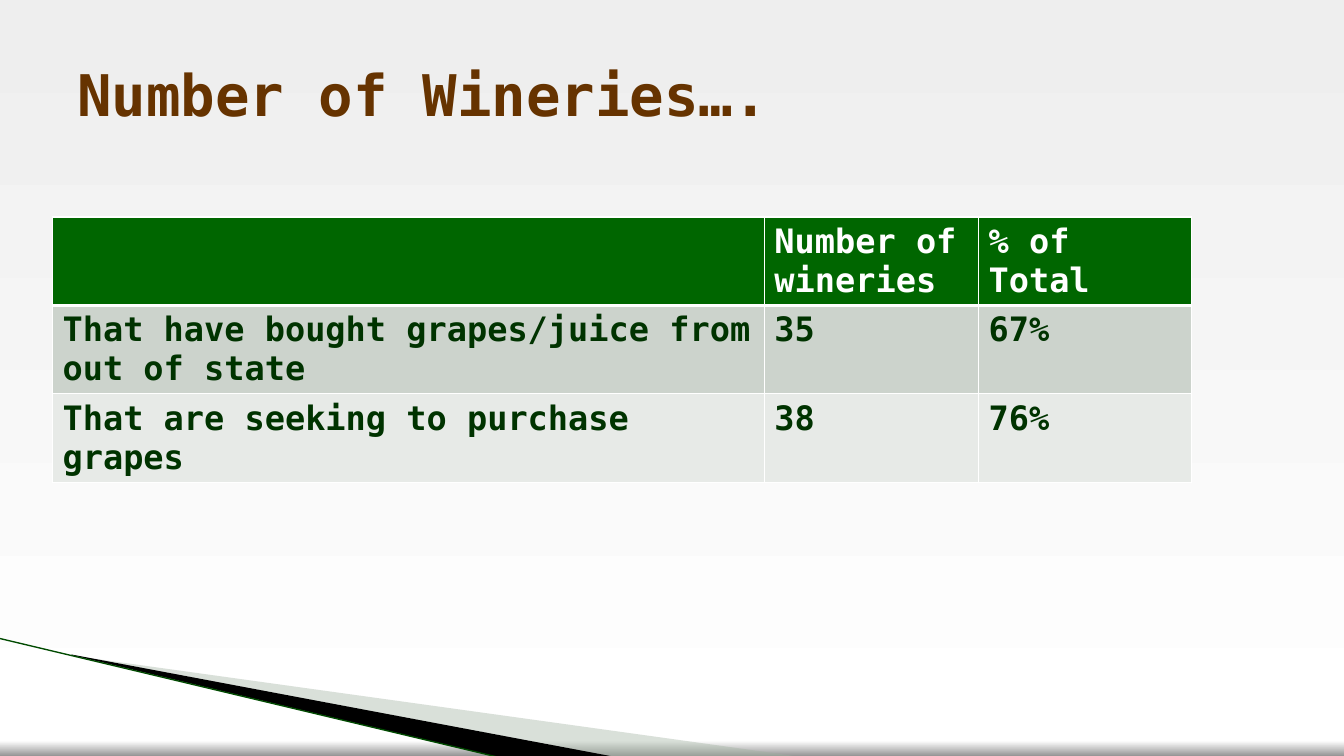
from lxml import etree
from pptx import Presentation
from pptx.dml.color import RGBColor
from pptx.enum.shapes import MSO_CONNECTOR as Connector
from pptx.enum.text import MSO_ANCHOR as Anchor
from pptx.oxml import parse_xml
from pptx.oxml.ns import nsdecls, qn
from pptx.util import Pt

FONT = "DejaVu Sans Mono"
TITLE = "Number of Wineries…."
ROWS = [
    ("", "Number of wineries", "% of Total"),
    ("That have bought grapes/juice from out of state", "35", "67%"),
    ("That are seeking to purchase grapes", "38", "76%"),
]
ROW_STYLES = [("006600", "FFFFFF"), ("CCD3CC", "003300"), ("E7EAE7", "003300")]
COLUMN_WIDTHS = [508.5, 153, 152]
TABLE_LEFT, TABLE_TOP, TABLE_HEIGHT, ROW_HEIGHT = 37.5, 155, 165.5, 29.5
BACKDROP = [(0, "EEEEEE"), (98, "FFFFFF"), (100, "959595")]
WEDGES = [
    ("A0B2A0", 40, [(52.5, 468.5), (571, 540.5), (438, 540.5), (52.5, 468)]),
    ("000000", 100, [(51, 467.5), (438.5, 540.5), (357, 541), (51.5, 468)]),
]
EDGE = [(-0.5, 456), (356.5, 541)]
EDGE_COLOR = "004A00"


def color(value):
    return RGBColor.from_string(value)


def style(paragraph, size, value):
    font = paragraph.font
    font.name, font.size, font.bold = FONT, Pt(size), True
    font.color.rgb = color(value)


def paint_backdrop(slide):
    fill = slide.background.fill
    fill.gradient()
    fill.gradient_angle = 270
    stops = slide.background._cSld.find(".//" + qn("a:gsLst"))
    for stop in list(stops):
        stops.remove(stop)
    for position, value in BACKDROP:
        stops.append(parse_xml(
            f'<a:gs {nsdecls("a")} pos="{position * 1000}"><a:srgbClr val="{value}"/></a:gs>'))


def add_wedge(slide, value, opacity, points):
    corners = [(Pt(x), Pt(y)) for x, y in points]
    builder = slide.shapes.build_freeform(*corners[0], scale=1.0)
    builder.add_line_segments(corners[1:], close=True)
    wedge = builder.convert_to_shape()
    wedge.shadow.inherit = False
    wedge.fill.solid()
    wedge.fill.fore_color.rgb = color(value)
    wedge.line.fill.background()
    if opacity < 100:
        tint = wedge._element.spPr.find(qn("a:solidFill")).find(qn("a:srgbClr"))
        etree.SubElement(tint, qn("a:alpha"), val=str(opacity * 1000))


def add_edge(slide):
    (x1, y1), (x2, y2) = EDGE
    edge = slide.shapes.add_connector(Connector.STRAIGHT, Pt(x1), Pt(y1), Pt(x2), Pt(y2))
    edge.line.color.rgb = color(EDGE_COLOR)
    edge.line.width = Pt(0.95)
    etree.SubElement(edge._element.spPr, qn("a:effectLst"))


def border(cell, bottom):
    properties = cell._tc.get_or_add_tcPr()
    sides = [("L", 1), ("R", 1), ("T", 1), ("B", bottom)]
    for place, (side, width) in enumerate(sides):
        properties.insert(place, parse_xml(
            f'<a:ln{side} {nsdecls("a")} w="{Pt(width)}"><a:solidFill>'
            f'<a:srgbClr val="FFFFFF"/></a:solidFill></a:ln{side}>'))


def add_winery_table(slide):
    frame = slide.shapes.add_table(
        len(ROWS), len(COLUMN_WIDTHS), Pt(TABLE_LEFT), Pt(TABLE_TOP),
        Pt(sum(COLUMN_WIDTHS)), Pt(TABLE_HEIGHT))
    table = frame.table
    for column, width in zip(table.columns, COLUMN_WIDTHS):
        column.width = Pt(width)
    for r, (texts, (fill, ink)) in enumerate(zip(ROWS, ROW_STYLES)):
        table.rows[r].height = Pt(ROW_HEIGHT)
        for c, text in enumerate(texts):
            cell = table.cell(r, c)
            cell.text = text
            cell.fill.solid()
            cell.fill.fore_color.rgb = color(fill)
            style(cell.text_frame.paragraphs[0], 24, ink)
            border(cell, 3 if r == 0 else 1)
    frame.height = Pt(TABLE_HEIGHT)


def add_title(slide):
    heading = slide.shapes.add_textbox(Pt(48), Pt(21.5), Pt(864), Pt(90)).text_frame
    heading.word_wrap = True
    heading.vertical_anchor = Anchor.MIDDLE
    heading.text = TITLE
    style(heading.paragraphs[0], 41, "663300")


def main():
    deck = Presentation()
    deck.slide_width, deck.slide_height = Pt(960), Pt(540)
    slide = deck.slides.add_slide(deck.slide_layouts[6])
    paint_backdrop(slide)
    for wedge in WEDGES:
        add_wedge(slide, *wedge)
    add_edge(slide)
    add_winery_table(slide)
    add_title(slide)
    deck.save("out.pptx")


if __name__ == "__main__":
    main()
